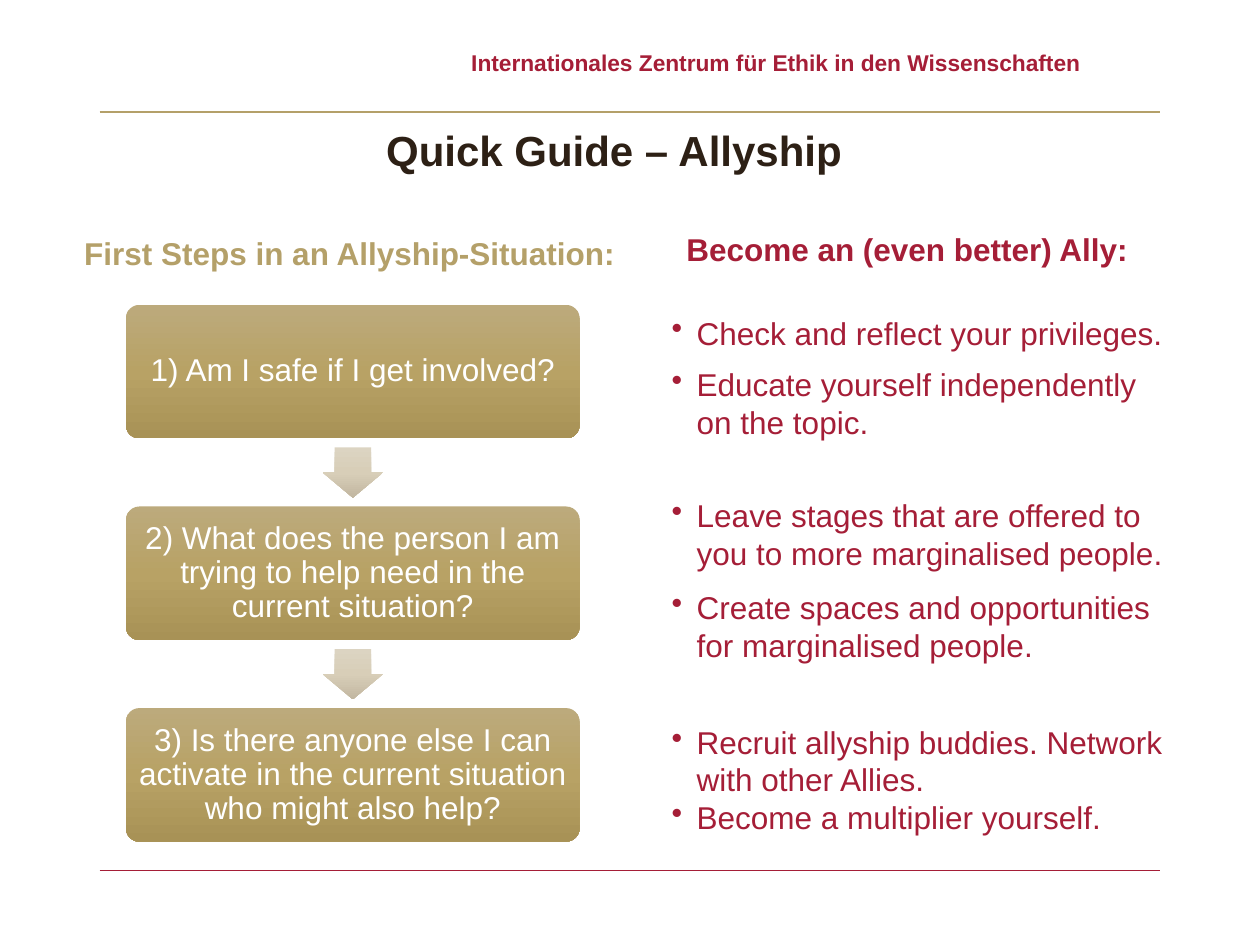
import copy
import dataclasses

import pptx
import pptx.dml.color
import pptx.enum.shapes
import pptx.enum.text
import pptx.oxml.ns
import pptx.util
from pptx.util import Inches

ALIGN = pptx.enum.text.PP_ALIGN
ANCHOR = pptx.enum.text.MSO_ANCHOR
SHAPE = pptx.enum.shapes.MSO_SHAPE
qn = pptx.oxml.ns.qn


@dataclasses.dataclass(frozen=True)
class Theme:
    font: str = "Arial"
    red: str = "A51E37"
    gold: str = "B4A069"
    dark: str = "2D2015"
    white: str = "FFFFFF"
    step_shades: tuple = ("BCAA7C", "B8A265", "A89256")
    arrow_shades: tuple = ("DCD4C2", "D8CEB8", "C2B7A1")
    header_size: float = 13
    title_size: float = 24
    body_size: float = 18
    rule_width: float = 0.75


def rgb(value):
    return pptx.dml.color.RGBColor.from_string(value)


def write_text(paragraph, text, *, font, size, color, bold=False, align=ALIGN.LEFT,
               spacing=None, after=0, bullet=None):
    if bullet:
        properties = paragraph._p.get_or_add_pPr()
        properties.set("marL", str(Inches(0.2)))
        properties.set("indent", str(Inches(-0.2)))
        properties.makeelement(qn("a:buChar"), {"char": bullet})
        properties.append(properties.makeelement(qn("a:buChar"), {"char": bullet}))
    paragraph.alignment = align
    paragraph.space_after = pptx.util.Pt(after)
    if spacing:
        paragraph.line_spacing = spacing
    run = paragraph.add_run()
    run.text = text
    run.font.name = font
    run.font.size = pptx.util.Pt(size)
    run.font.bold = bold
    run.font.color.rgb = rgb(color)


class GuideSlide:
    def __init__(self, slide, theme):
        self.slide = slide
        self.theme = theme

    def rule(self, y, color):
        line = self.slide.shapes.add_connector(
            pptx.enum.shapes.MSO_CONNECTOR.STRAIGHT,
            Inches(0.79), Inches(y), Inches(9.21), Inches(y))
        line.line.color.rgb = rgb(color)
        line.line.width = pptx.util.Pt(self.theme.rule_width)
        properties = line._element.spPr
        properties.append(properties.makeelement(qn("a:effectLst"), {}))

    def frame(self, shape, inset, anchor, wrap):
        frame = shape.text_frame
        frame.word_wrap = wrap
        frame.vertical_anchor = anchor
        frame.margin_left = frame.margin_right = Inches(inset[0])
        frame.margin_top = frame.margin_bottom = Inches(inset[1])
        return frame

    def label(self, box, text, *, inset=(0, 0), anchor=ANCHOR.TOP, wrap=True, **style):
        area = self.slide.shapes.add_textbox(*map(Inches, box))
        frame = self.frame(area, inset, anchor, wrap)
        write_text(frame.paragraphs[0], text, font=self.theme.font, bold=True, **style)

    def bullets(self, box, items):
        area = self.slide.shapes.add_textbox(*map(Inches, box))
        area.fill.solid()
        area.fill.fore_color.rgb = rgb(self.theme.white)
        frame = self.frame(area, (0, 0), ANCHOR.TOP, True)
        for index, (text, after) in enumerate(items):
            paragraph = frame.add_paragraph() if index else frame.paragraphs[0]
            write_text(paragraph, text, font=self.theme.font, size=self.theme.body_size,
                       color=self.theme.red, spacing=pptx.util.Pt(21.5), after=after,
                       bullet="•")

    def shaded(self, kind, box, shades, adjustments):
        shape = self.slide.shapes.add_shape(kind, *map(Inches, box))
        shape.shadow.inherit = False
        shape.line.fill.background()
        for index, value in enumerate(adjustments):
            shape.adjustments[index] = value
        shape.fill.gradient()
        shape.fill.gradient_angle = 270
        gradient = shape._element.spPr.find(qn("a:gradFill"))
        gradient.set("rotWithShape", "0")
        stops = gradient.find(qn("a:gsLst"))
        stops.insert(1, copy.deepcopy(stops[0]))
        for stop, position, shade in zip(shape.fill.gradient_stops, (0, 0.5, 1), shades):
            stop.position = position
            stop.color.rgb = rgb(shade)
        return shape

    def step(self, box, text):
        shape = self.shaded(SHAPE.ROUNDED_RECTANGLE, box, self.theme.step_shades, (0.1,))
        frame = self.frame(shape, (0.07, 0.07), ANCHOR.MIDDLE, True)
        write_text(frame.paragraphs[0], text, font=self.theme.font,
                   size=self.theme.body_size, color=self.theme.white,
                   align=ALIGN.CENTER, spacing=0.9)

    def arrow(self, box):
        shape = self.shaded(SHAPE.RIGHT_ARROW, box, self.theme.arrow_shades, (0.6, 0.5))
        shape.rotation = 90


def main():
    """Build the Allyship quick guide slide."""
    presentation = pptx.Presentation()
    presentation.slide_width = Inches(10)
    presentation.slide_height = Inches(7.5)
    theme = Theme()
    guide = GuideSlide(presentation.slides.add_slide(presentation.slide_layouts[6]), theme)

    guide.rule(0.89, theme.gold)
    guide.rule(6.91, theme.red)
    guide.label((3.74, 0.38, 4.93, 0.21),
                "Internationales Zentrum für Ethik in den Wissenschaften",
                size=theme.header_size, color=theme.red, spacing=pptx.util.Pt(16))
    guide.label((0.71, 0.99, 8.42, 0.4), "Quick Guide – Allyship ", anchor=ANCHOR.BOTTOM,
                size=theme.title_size, color=theme.dark, align=ALIGN.CENTER)

    guide.bullets((5.33, 2.49, 3.97, 4.25), (
        ("Check and reflect your privileges.", 8),
        ("Educate yourself independently on the topic.", 32),
        ("Leave stages that are offered to you to more marginalised people.", 9.5),
        ("Create spaces and opportunities for marginalised people.", 34),
        ("Recruit allyship buddies. Network with other Allies.", 0),
        ("Become a multiplier yourself.", 0),
    ))

    questions = (
        "1) Am I safe if I get involved?",
        "2) What does the person I am trying to help need in the current situation?",
        "3) Is there anyone else I can activate in the current situation who might also help?",
    )
    for index, question in enumerate(questions):
        top = 2.42 + 1.6 * index
        if index:
            guide.arrow((2.6, top - 0.51, 0.4, 0.48))
        guide.step((1, top, 3.6, 1.06), question)

    heading = dict(inset=(0.1, 0.05), wrap=False, size=theme.body_size)
    guide.label((0.57, 1.81, 4.46, 0.4), "First Steps in an Allyship-Situation:",
                color=theme.gold, **heading)
    guide.label((5.33, 1.78, 3.74, 0.71), "Become an (even better) Ally:",
                color=theme.red, align=ALIGN.CENTER, **heading)
    presentation.save("out.pptx")


if __name__ == "__main__":
    main()
